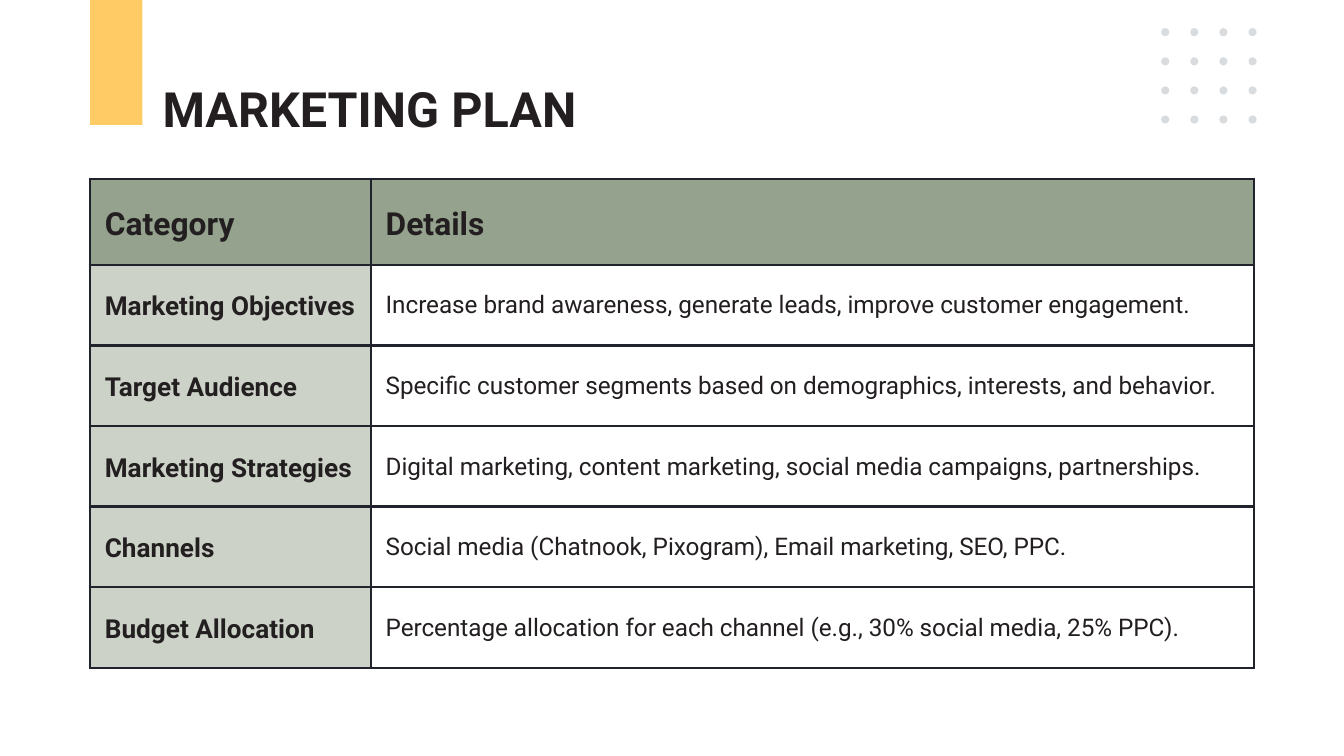
from dataclasses import dataclass

from lxml.etree import SubElement
from pptx import Presentation
from pptx.dml.color import RGBColor as RGB
from pptx.enum.shapes import MSO_SHAPE as Kind
from pptx.oxml import parse_xml
from pptx.oxml.ns import nsdecls, qn
from pptx.util import Inches, Pt


@dataclass(frozen=True)
class Theme:
    face: str = "Roboto"
    ink: str = "231F20"
    edge: str = "20232B"
    gold: str = "FFCB65"
    sage: str = "94A28E"
    mist: str = "CCD2C8"
    dot: str = "D8DCDF"
    title: int = 26
    head: int = 17
    label: int = 14
    body: int = 13
    rule: float = 1.5


THEME = Theme()
ROWS = [
    ("Category", "Details"),
    ("Marketing Objectives",
     "Increase brand awareness, generate leads, improve customer engagement."),
    ("Target Audience",
     "Specific customer segments based on demographics, interests, and behavior."),
    ("Marketing Strategies",
     "Digital marketing, content marketing, social media campaigns, partnerships."),
    ("Channels",
     "Social media (Chatnook, Pixogram), Email marketing, SEO, PPC."),
    ("Budget Allocation",
     "Percentage allocation for each channel (e.g., 30% social media, 25% PPC)."),
]


def write(frame, text, size, bold):
    para = frame.paragraphs[0]
    para.text = text
    look = {"name": THEME.face, "size": Pt(size), "bold": bold}
    for key, value in look.items():
        setattr(para.runs[0].font, key, value)
    para.runs[0].font.color.rgb = RGB.from_string(THEME.ink)


def draw(kind, left, top, width, height, color):
    """Add a filled preset shape without outline or shadow."""
    shape = slide.shapes.add_shape(
        kind, Inches(left), Inches(top), Inches(width), Inches(height))
    shape.shadow.inherit = False
    shape.fill.solid()
    shape.fill.fore_color.rgb = RGB.from_string(color)
    shape.line.fill.background()


deck = Presentation()
deck.slide_width = Inches(10)
deck.slide_height = Inches(10) * 9 // 16
slide = deck.slides.add_slide(deck.slide_layouts[6])

# Title
draw(Kind.RECTANGLE, 0.67, 0, 0.39, 0.93, THEME.gold)
box = slide.shapes.add_textbox(Inches(1.21), Inches(0.59), Inches(4.37), Inches(0.44))
frame = box.text_frame
pads = {"margin_left": 0, "margin_top": 0, "margin_right": 0, "margin_bottom": 0}
for key, value in {**pads, "word_wrap": True}.items():
    setattr(frame, key, value)
write(frame, "MARKETING PLAN", THEME.title, True)

# Plan table
grid = slide.shapes.add_table(
    len(ROWS), 2, Inches(0.67), Inches(1.33), Inches(8.66), Inches(3.64)).table
grid.first_row = grid.horz_banding = False
for col, width in zip(grid.columns, (2.09, 6.57)):
    col.width = Inches(width)
pads.update(margin_left=Inches(0.11), margin_top=Inches(0.2))

for r, texts in enumerate(ROWS):
    grid.rows[r].height = Inches(0.6 if r else 0.64)
    for c, text in enumerate(texts):
        cell = grid.cell(r, c)
        for key, value in pads.items():
            setattr(cell, key, value)
        if r == 0:
            size, color = THEME.head, THEME.sage
        elif c == 0:
            size, color = THEME.label, THEME.mist
        else:
            size, color = THEME.body, None
        write(cell.text_frame, text, size, r == 0 or c == 0)
        if color:
            cell.fill.solid()
            cell.fill.fore_color.rgb = RGB.from_string(color)
        else:
            cell.fill.background()
        # Borders must come before the fill in the cell properties
        props = cell._tc.get_or_add_tcPr()
        for i, side in enumerate("LRTB"):
            line = parse_xml(f'<a:ln{side} {nsdecls("a")} w="{Pt(THEME.rule)}"/>')
            fill = SubElement(line, qn("a:solidFill"))
            SubElement(fill, qn("a:srgbClr"), val=THEME.edge)
            props.insert(i, line)

# Dot grid
gap = 0.65 / 3
for col in range(4):
    for row in range(4):
        draw(Kind.OVAL, 8.64 + col * gap, 0.21 + row * gap, 0.06, 0.06, THEME.dot)

deck.save("out.pptx")
